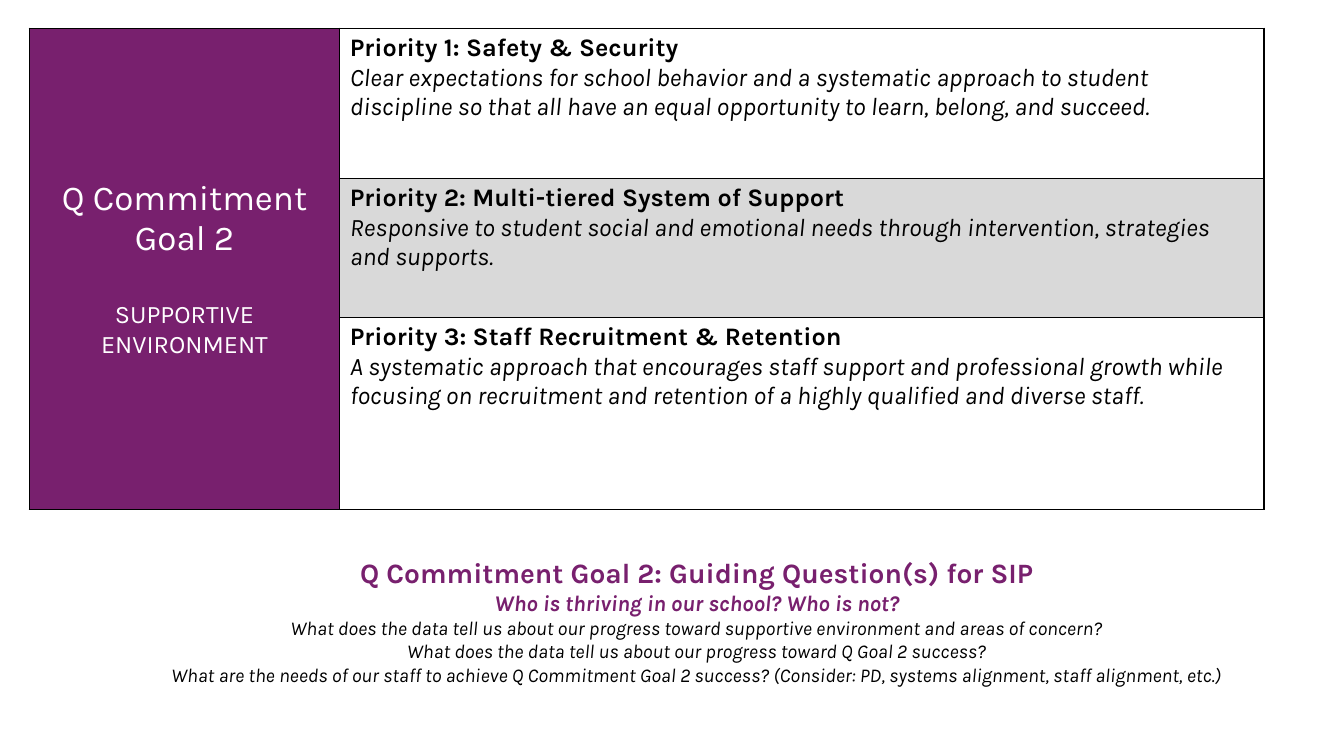
from dataclasses import dataclass

from lxml.etree import SubElement as Sub
from pptx import Presentation
from pptx.dml.color import RGBColor as Rgb
from pptx.enum.text import MSO_ANCHOR as Anchor, PP_ALIGN as Align
from pptx.oxml.ns import qn
from pptx.table import _Cell as Cell
from pptx.text.text import TextFrame as Frame
from pptx.util import Pt


@dataclass(frozen=True)
class Theme:
    font: str = "Karla"
    plum: str = "78206E"
    gray: str = "D9D9D9"
    white: str = "FFFFFF"
    black: str = "000000"
    goal: float = 25
    head: float = 20
    body: float = 18
    lead: float = 16
    ask: float = 14
    rule: float = 1


T = Theme()


@dataclass(frozen=True)
class Span:
    text: str
    size: float
    color: str = T.black
    bold: bool = False
    slant: bool = False


@dataclass(frozen=True)
class Para:
    spans: tuple[Span, ...]
    align: Align = Align.CENTER
    gap: float = 0


@dataclass(frozen=True)
class Row:
    title: str
    text: str
    fill: str
    height: float


GOAL = [
    Para((Span("Q Commitment", T.goal, T.white),)),
    Para((Span("Goal 2", T.goal, T.white),)),
    Para((Span("SUPPORTIVE ENVIRONMENT", T.body, T.white),), gap=29.2),
]

ROWS = [
    Row("Priority 1: Safety & Security",
        "Clear expectations for school behavior and a systematic approach to student "
        "discipline so that all have an equal opportunity to learn, belong, and succeed.",
        T.white, 107.3),
    Row("Priority 2: Multi-tiered System of Support",
        "Responsive to student social and emotional needs through intervention, "
        "strategies and supports.",
        T.gray, 99.4),
    Row("Priority 3: Staff Recruitment & Retention",
        "A systematic approach that encourages staff support and professional growth while "
        "focusing on recruitment and retention of a highly qualified and diverse staff.",
        T.white, 106.6),
]
COLS = (221.8, 660.2)

ASKS = [
    "What does the data tell us about our progress toward supportive environment "
    "and areas of concern?",
    "What does the data tell us about our progress toward Q Goal 2 success?",
    "What are the needs of our staff to achieve Q Commitment Goal 2 success? "
    "(Consider: PD, systems alignment, staff alignment, etc.)",
]
GUIDE = [
    Para((Span("Q Commitment Goal 2: Guiding Question(s) for SIP", T.head, T.plum, True),
          Span("Who is thriving in our school? Who is not?", T.lead, T.plum, True, True))),
    *(Para((Span(ask, T.ask, slant=True),)) for ask in ASKS),
]


def write(frame: Frame, paras: list[Para]) -> None:
    for n, para in enumerate(paras):
        p = frame.add_paragraph() if n else frame.paragraphs[0]
        p.alignment = para.align
        if para.gap:
            p.space_before = Pt(para.gap)
        for k, span in enumerate(para.spans):
            if k:
                p.add_line_break()
            run = p.add_run()
            run.text = span.text
            font = run.font
            font.name, font.size = T.font, Pt(span.size)
            font.bold, font.italic = span.bold, span.slant
            font.color.rgb = Rgb.from_string(span.color)


def paint(cell: Cell, fill: str) -> None:
    props = cell._tc.get_or_add_tcPr()
    for side in ("lnL", "lnR", "lnT", "lnB"):
        line = Sub(props, qn(f"a:{side}"), w=str(Pt(T.rule)))
        Sub(Sub(line, qn("a:solidFill")), qn("a:srgbClr"), val=T.black)
    cell.fill.solid()
    cell.fill.fore_color.rgb = Rgb.from_string(fill)


def main() -> None:
    deck = Presentation()
    deck.slide_width, deck.slide_height = Pt(960), Pt(540)
    shapes = deck.slides.add_slide(deck.slide_layouts[6]).shapes

    high = sum(row.height for row in ROWS)
    grid = shapes.add_table(len(ROWS), len(COLS), Pt(20.9), Pt(20.2),
                            Pt(sum(COLS)), Pt(high)).table
    grid.first_row = grid.horz_banding = False
    for col, width in zip(grid.columns, COLS):
        col.width = Pt(width)
    for n, row in enumerate(ROWS):
        grid.rows[n].height = Pt(row.height)
        paint(grid.cell(n, 0), T.plum)
        cell = grid.cell(n, 1)
        paint(cell, row.fill)
        spans = (Span(row.title, T.body, bold=True), Span(row.text, T.body, slant=True))
        write(cell.text_frame, [Para(spans, Align.LEFT)])
    goal = grid.cell(0, 0)
    goal.merge(grid.cell(len(ROWS) - 1, 0))
    goal.vertical_anchor = Anchor.MIDDLE
    write(goal.text_frame, GOAL)

    frame = shapes.add_textbox(Pt(92.9), Pt(393.1), Pt(810), Pt(138.2)).text_frame
    frame.word_wrap = True
    write(frame, GUIDE)

    deck.save("out.pptx")


if __name__ == "__main__":
    main()
